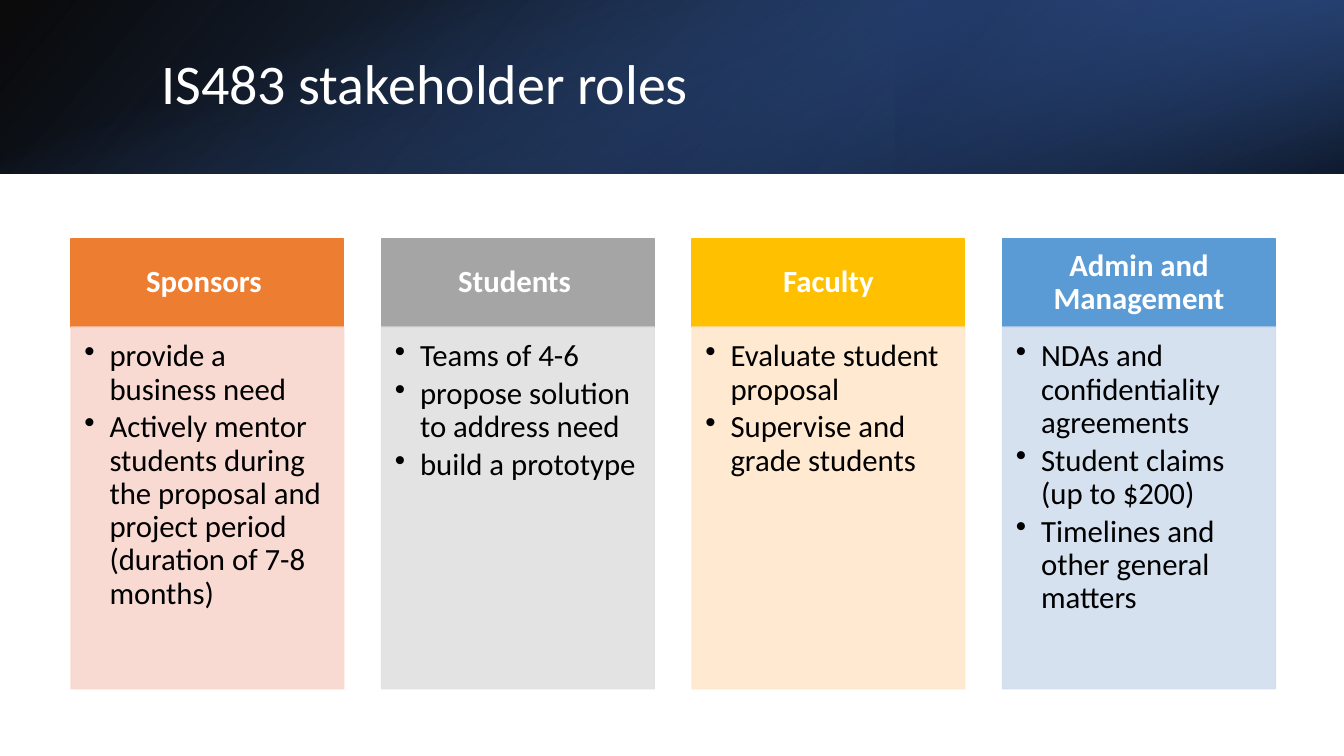
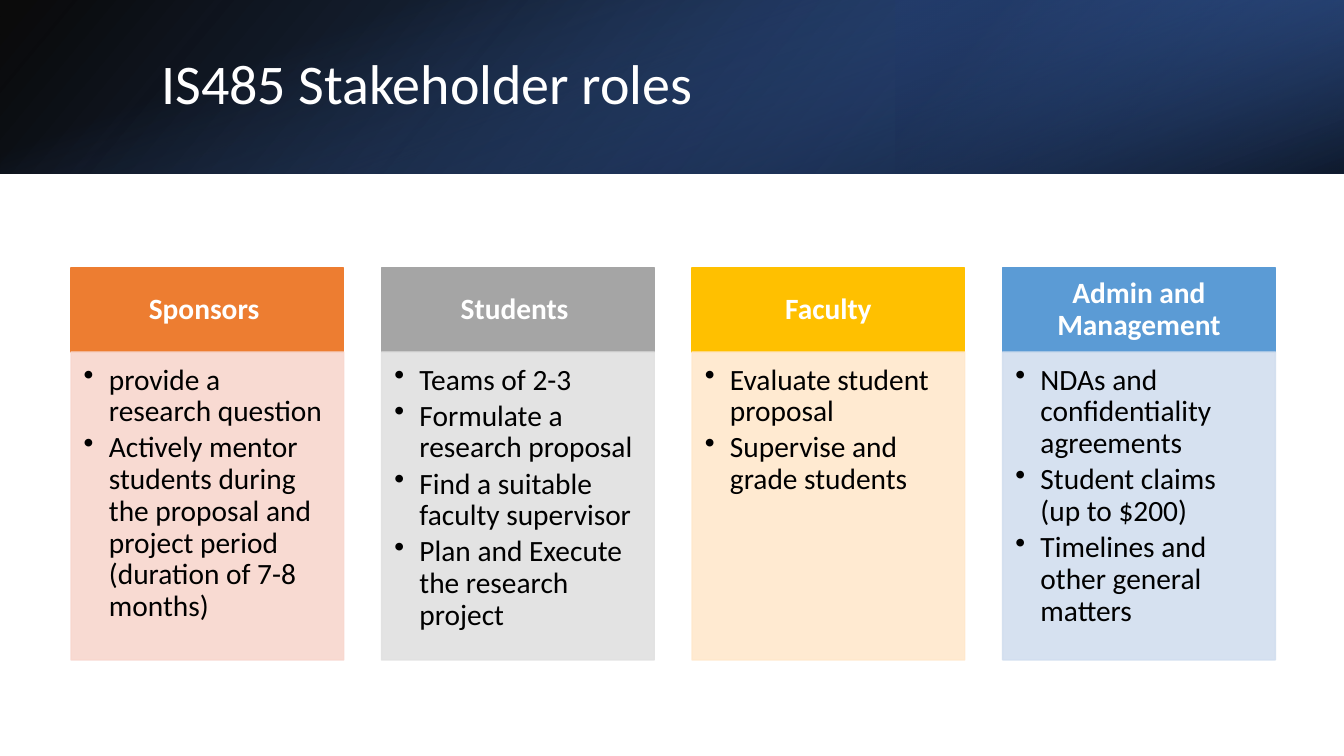
from lxml import etree
from pptx import Presentation
from pptx.dml.color import RGBColor
from pptx.enum.shapes import MSO_SHAPE
from pptx.enum.text import MSO_ANCHOR, MSO_AUTO_SIZE, PP_ALIGN
from pptx.oxml.ns import qn
from pptx.util import Pt

RECTANGLE = MSO_SHAPE.RECTANGLE
TOP, MIDDLE = MSO_ANCHOR.TOP, MSO_ANCHOR.MIDDLE
LEFT, CENTER = PP_ALIGN.LEFT, PP_ALIGN.CENTER
NO_AUTOFIT = MSO_AUTO_SIZE.NONE

BLACK = RGBColor(0x00, 0x00, 0x00)
WHITE = RGBColor(0xFF, 0xFF, 0xFF)
BLUE = RGBColor(0x44, 0x72, 0xC4)
DARK_BLUE = RGBColor(0x2F, 0x55, 0x97)
NAVY = RGBColor(0x20, 0x38, 0x64)
ORANGE, PALE_ORANGE = RGBColor(0xED, 0x7D, 0x31), RGBColor(0xF8, 0xD7, 0xCE)
GRAY, PALE_GRAY = RGBColor(0xA5, 0xA5, 0xA5), RGBColor(0xE1, 0xE1, 0xE1)
GOLD, PALE_GOLD = RGBColor(0xFF, 0xC0, 0x00), RGBColor(0xFF, 0xE8, 0xCC)
SKY, PALE_SKY = RGBColor(0x5B, 0x9B, 0xD5), RGBColor(0xD2, 0xDE, 0xEF)

SLIDE_WIDTH, SLIDE_HEIGHT = 960, 540
BAND_HEIGHT = 124
COLUMN_LEFT, COLUMN_WIDTH, COLUMN_PITCH = 50.8, 194.8, 221.8
TITLE_ONLY = 5

COLUMNS = [
    ("Sponsors ", ORANGE, PALE_ORANGE),
    ("Students ", GRAY, PALE_GRAY),
    ("Faculty", GOLD, PALE_GOLD),
    ("Admin and Management", SKY, PALE_SKY),
]
MENTORING = ("Actively mentor students during the proposal and project period "
             "(duration of 7-8 months)")
FACULTY_ROLES = ["Evaluate student proposal", "Supervise and grade students"]
ADMIN_ROLES = ["NDAs and confidentiality agreements",
               "Student claims (up to $200)",
               "Timelines and other general matters"]


def set_opacity(shape, opacities):
    """Give the shape's RGB colours, in document order, these percentages."""
    colors = list(shape.element.spPr.iter(qn("a:srgbClr")))
    for color, opacity in zip(colors, opacities):
        etree.SubElement(color, qn("a:alpha")).set("val", str(opacity * 1000))


class Deck:
    font = "Calibri"
    title_size = 40
    line_spacing = 0.9

    def __init__(self):
        self.presentation = Presentation()
        self.presentation.slide_width = Pt(SLIDE_WIDTH)
        self.presentation.slide_height = Pt(SLIDE_HEIGHT)
        self.slide = None

    def add_slide(self, title):
        layout = self.presentation.slide_layouts[TITLE_ONLY]
        self.slide = self.presentation.slides.add_slide(layout)
        self.add_band()
        self.add_title(title)

    def add_rectangle(self, left, top, width, height):
        shape = self.slide.shapes.add_shape(
            RECTANGLE, Pt(left), Pt(top), Pt(width), Pt(height))
        shape.shadow.inherit = False
        return shape

    def add_gradient(self, box, stops, angle, rotation=0, flipped=False):
        """Stops are (percent, colour, opacity); the angle runs clockwise."""
        shape = self.add_rectangle(*box)
        shape.rotation = rotation
        if flipped:
            shape.element.spPr.get_or_add_xfrm().set("flipH", "1")
        shape.line.fill.background()
        shape.fill.gradient()
        shape.fill.gradient_angle = 360 - angle
        for stop, (percent, color, _) in zip(shape.fill.gradient_stops, stops):
            stop.position = percent / 100
            stop.color.rgb = color
        set_opacity(shape, [opacity for _, _, opacity in stops])

    def add_band(self):
        """Layer three gradients; the last is an upright bar turned flat."""
        self.add_gradient((0, 0, SLIDE_WIDTH, BAND_HEIGHT),
                          [(0, BLACK, 96), (100, DARK_BLUE, 100)],
                          140, flipped=True)
        self.add_gradient((640, 0, 320, BAND_HEIGHT),
                          [(19, NAVY, 68), (100, BLUE, 79)],
                          320, rotation=180, flipped=True)
        offset = (SLIDE_WIDTH - BAND_HEIGHT) / 2
        self.add_gradient((offset, -offset, BAND_HEIGHT, SLIDE_WIDTH),
                          [(23, BLUE, 0), (99, BLACK, 74)],
                          340, rotation=90)

    def add_title(self, text):
        title = self.slide.shapes.title
        title.left, title.top = Pt(108), Pt(27)
        title.width, title.height = Pt(790), Pt(69)
        frame = title.text_frame
        frame.auto_size = NO_AUTOFIT
        frame.vertical_anchor = MIDDLE
        self.add_text(frame.paragraphs[0], text, self.title_size, WHITE)
        self.slide.shapes.element.append(title.element)  # in front of the band

    def add_text(self, paragraph, text, size, color, bold=False, alignment=LEFT):
        paragraph.alignment = alignment
        paragraph.line_spacing = self.line_spacing
        run = paragraph.add_run()
        run.text = text
        run.font.name = self.font
        run.font.size = Pt(size)
        run.font.bold = bold
        run.font.color.rgb = color

    def add_panel(self, box, color, margins, anchor):
        shape = self.add_rectangle(*box)
        shape.fill.solid()
        shape.fill.fore_color.rgb = color
        shape.line.color.rgb = color
        shape.line.width = Pt(1)
        frame = shape.text_frame
        frame.word_wrap = True
        frame.vertical_anchor = anchor
        (frame.margin_left, frame.margin_top,
         frame.margin_right, frame.margin_bottom) = map(Pt, margins)
        return shape

    def add_heading(self, box, text, color, size):
        side, edge = 0.57 * size, 0.32 * size
        shape = self.add_panel(box, color, (side, edge, side, edge), MIDDLE)
        self.add_text(shape.text_frame.paragraphs[0], text, size, WHITE,
                      bold=True, alignment=CENTER)

    def add_list(self, box, items, color, size):
        margins = [ratio * size for ratio in (0.43, 0.43, 0.57, 0.64)]
        shape = self.add_panel(box, color, margins, TOP)
        set_opacity(shape, [90, 90])
        frame = shape.text_frame
        for index, item in enumerate(items):
            paragraph = frame.add_paragraph() if index else frame.paragraphs[0]
            self.add_text(paragraph, item, size, BLACK)
            paragraph.space_after = Pt(0.15 * size)
            self.add_bullet(paragraph)

    def add_bullet(self, paragraph):
        properties = paragraph._p.get_or_add_pPr()
        properties.set("marL", str(Pt(18)))
        properties.set("indent", str(Pt(-18)))
        etree.SubElement(properties, qn("a:buChar")).set("char", "•")

    def add_columns(self, lists, top, heading_height, list_height, size):
        for index, (column, items) in enumerate(zip(COLUMNS, lists)):
            heading, color, pale = column
            left = COLUMN_LEFT + index * COLUMN_PITCH
            self.add_heading((left, top, COLUMN_WIDTH, heading_height),
                             heading, color, size)
            self.add_list((left, top + heading_height, COLUMN_WIDTH, list_height),
                          items, pale, size)


def main():
    deck = Deck()

    deck.add_slide("IS483 stakeholder roles")
    deck.add_columns([
        ["provide a business need", MENTORING],
        ["Teams of 4-6", "propose solution to address need", "build a prototype"],
        FACULTY_ROLES,
        ADMIN_ROLES,
    ], top=170.6, heading_height=63, list_height=258.4, size=22)

    deck.add_slide("IS485 Stakeholder roles")
    deck.add_columns([
        ["provide a research question", MENTORING],
        ["Teams of 2-3", "Formulate a research proposal",
         "Find a suitable faculty supervisor",
         "Plan and Execute the research project"],
        FACULTY_ROLES,
        ADMIN_ROLES,
    ], top=191.4, heading_height=60, list_height=220, size=21)

    deck.presentation.save("out.pptx")


if __name__ == "__main__":
    main()
